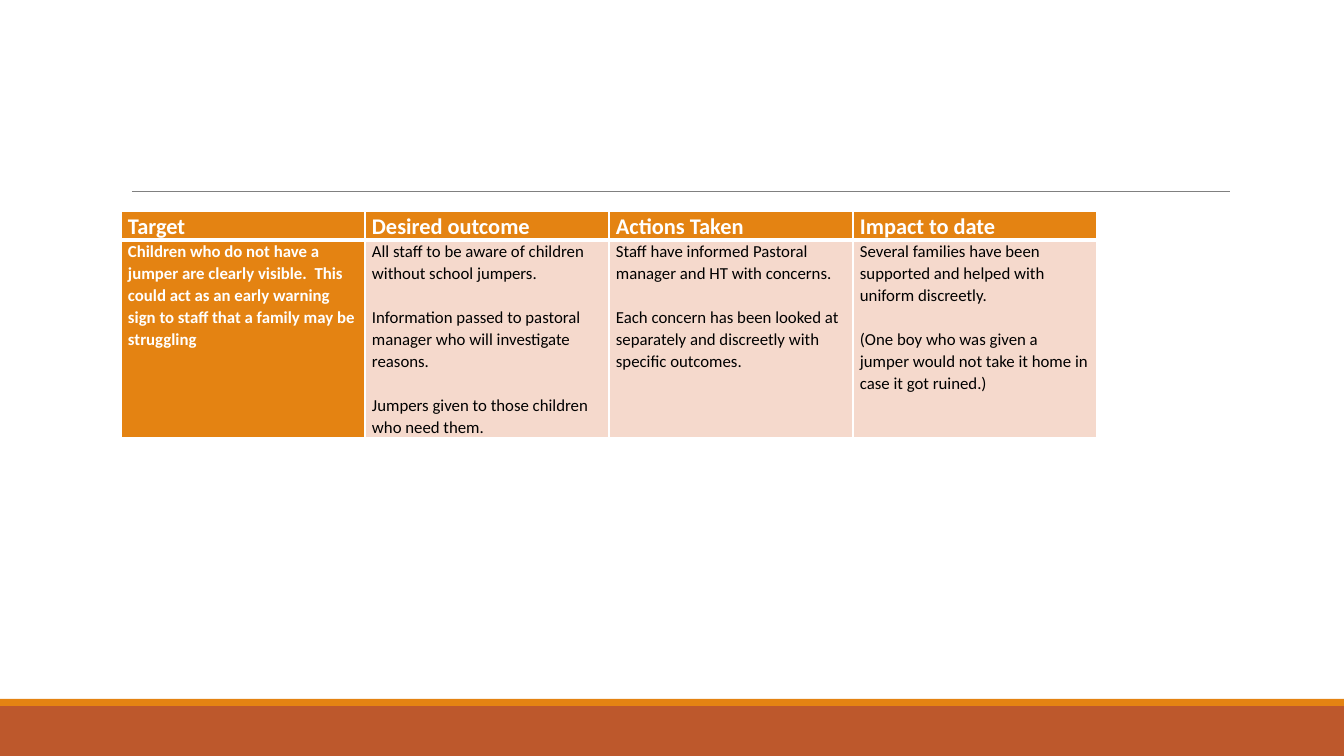
from lxml.etree import SubElement
from pptx import Presentation
from pptx.dml.color import RGBColor
from pptx.enum.shapes import MSO_CONNECTOR, MSO_SHAPE
from pptx.enum.text import MSO_ANCHOR
from pptx.oxml.ns import qn
from pptx.util import Pt

EMU_PER_PX = 12192000 / 1344
COLORS = {
    "orange": "E48312",
    "rust": "BD582C",
    "blush": "F5D9CC",
    "rule": "808080",
    "white": "FFFFFF",
    "black": "000000",
}
HEADINGS = ["Target", "Desired outcome", "Actions Taken", "Impact to date"]
DETAILS = [
    ["Children who do not have a jumper are clearly visible.  This could act as "
     "an early warning sign to staff that a family may be struggling"],
    ["All staff to be aware of children without school jumpers.",
     "Information passed to pastoral manager who will investigate reasons.",
     "Jumpers given to those children who need them."],
    ["Staff have informed Pastoral manager and HT with concerns.",
     "Each concern has been looked at separately and discreetly with specific outcomes."],
    ["Several families have been supported and helped with uniform discreetly.",
     "(One boy who was given a jumper would not take it home in case it got ruined.)"],
]


def px(length):
    return round(length * EMU_PER_PX)


def color(name):
    return RGBColor.from_string(COLORS[name])


class SlideBuilder:
    font = "Calibri"
    line_spacing = 1.07
    paragraph_gap = Pt(15.7)
    cell_margin = px(7)

    def __init__(self, slide):
        self.slide = slide

    def bar(self, left, top, width, height, fill):
        shape = self.slide.shapes.add_shape(
            MSO_SHAPE.RECTANGLE, px(left), px(top), px(width), px(height))
        shape.shadow.inherit = False
        shape.fill.solid()
        shape.fill.fore_color.rgb = color(fill)
        shape.line.fill.background()

    def rule(self, left, right, y):
        connector = self.slide.shapes.add_connector(
            MSO_CONNECTOR.STRAIGHT, px(left), px(y), px(right), px(y))
        connector.line.color.rgb = color("rule")
        connector.line.width = Pt(0.5)
        SubElement(connector._element.spPr, qn("a:effectLst"))

    def borders(self, cell, **widths):
        properties = cell._tc.get_or_add_tcPr()
        for side, width in widths.items():
            line = SubElement(properties, qn(f"a:ln{side}"), w=str(Pt(width)))
            fill = SubElement(line, qn("a:solidFill"))
            SubElement(fill, qn("a:srgbClr"), val=COLORS["white"])

    def cell(self, cell, paragraphs, size, fill, text_color, bold):
        cell.margin_left = cell.margin_right = self.cell_margin
        cell.margin_top = cell.margin_bottom = 0
        cell.fill.solid()
        cell.fill.fore_color.rgb = color(fill)
        cell.text_frame.text = "\n".join(paragraphs)
        for index, paragraph in enumerate(cell.text_frame.paragraphs):
            paragraph.line_spacing = self.line_spacing
            if index:
                paragraph.space_before = self.paragraph_gap
            for run in paragraph.runs:
                run.font.name = self.font
                run.font.size = Pt(size)
                run.font.bold = bold
                run.font.color.rgb = color(text_color)

    def table(self, left, top, column_width, row_heights):
        columns = len(HEADINGS)
        table = self.slide.shapes.add_table(
            len(row_heights), columns, px(left), px(top),
            px(column_width * columns), px(sum(row_heights))).table
        table.horz_banding = False
        for row, height in zip(table.rows, row_heights):
            row.height = px(height)
        for index, (heading, details) in enumerate(zip(HEADINGS, DETAILS)):
            table.columns[index].width = px(column_width)
            header, body = table.cell(0, index), table.cell(1, index)
            self.borders(header, L=1, R=1, T=1, B=3)
            self.borders(body, L=1, R=1, T=3, B=1)
            self.cell(header, [heading], 16, "orange", "white", True)
            header.vertical_anchor = MSO_ANCHOR.MIDDLE
            if index == 0:
                self.cell(body, details, 12, "orange", "white", True)
            else:
                self.cell(body, details, 12, "blush", "black", False)


def main():
    presentation = Presentation()
    presentation.slide_width = px(1344)
    presentation.slide_height = px(756)
    slide = presentation.slides.add_slide(presentation.slide_layouts[6])
    builder = SlideBuilder(slide)
    builder.bar(0, 706, 1344, 50, "rust")
    builder.bar(0, 699, 1344, 7, "orange")
    builder.rule(132, 1230, 191)
    builder.table(121, 211, 244, [29, 197])
    presentation.save("out.pptx")


if __name__ == "__main__":
    main()
